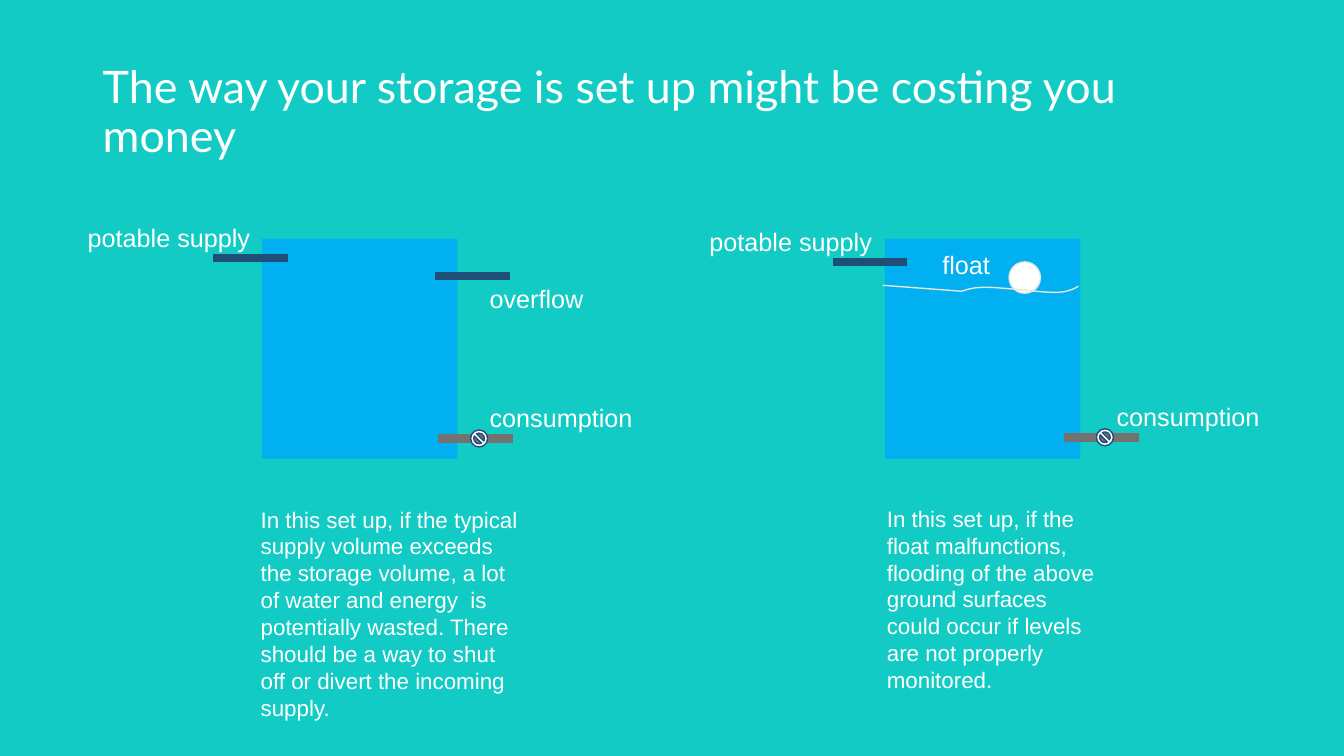
"""Build a slide comparing two water storage set-ups."""
from lxml.etree import SubElement
from pptx import Presentation
from pptx.dml.color import RGBColor
from pptx.enum.shapes import MSO_CONNECTOR, MSO_SHAPE
from pptx.enum.text import MSO_ANCHOR
from pptx.oxml.ns import qn
from pptx.util import Cm, Pt

TEAL = RGBColor(0x12, 0xCB, 0xC4)
WATER = RGBColor(0x00, 0xB0, 0xF0)
NAVY = RGBColor(0x1F, 0x4E, 0x79)
GREY = RGBColor(0x76, 0x71, 0x71)
PALE = RGBColor(0xE7, 0xE6, 0xE6)
WHITE = RGBColor(0xFF, 0xFF, 0xFF)

TITLE = "The way your storage is set up might be costing you money"
NOTES = [
    ("In this set up, if the typical supply volume exceeds the storage volume, "
     "a lot of water and energy  is potentially wasted. There should be a way "
     "to shut off or divert the incoming supply.", 6.32, 12.62, 7.04, 5.74),
    ("In this set up, if the float malfunctions,  flooding of the above ground "
     "surfaces could occur if levels are not properly monitored.",
     22.1, 12.6, 5.97, 5.05),
]
LABELS = [
    ("potable supply", 1.96, 5.49, 4.9),
    ("overflow", 12.09, 7.01, 3.02),
    ("consumption", 12.09, 10.01, 4.37),
    ("potable supply", 17.63, 5.59, 4.9),
    ("float", 23.5, 6.17, 1.8),
    ("consumption", 27.89, 9.98, 4.37),
]
TANK_LEFTS = [6.6, 22.3]
SUPPLY_PIPES = [(5.38, 6.5), (10.97, 6.96), (20.99, 6.6)]
VALVED_PIPES = [(11.05, 11.05), (26.82, 11.02)]
FLOAT = (25.43, 6.6, 0.79, 0.79)
WAVE_START = (22.25, 7.19)
WAVE_CREST = (24.23, 7.34)
WAVE_CURVES = [
    ((24.33, 7.32), (24.46, 7.24), (24.84, 7.24)),
    ((25.25, 7.24), (26.21, 7.37), (26.59, 7.37)),
    ((26.97, 7.37), (27.18, 7.21), (27.18, 7.21)),
]
TANK_TOP, TANK_W, TANK_H = 6.02, 4.93, 5.54
PIPE_LENGTH = 1.88
VALVE_OFFSET, VALVE_SIZE = 0.81, 0.43
LABEL_H = 1.02
CURVE_STEPS = 12


def add_text(s, text, x, y, w, h, size, font="Arial", wrap=True):
    tb = s.shapes.add_textbox(Cm(x), Cm(y), Cm(w), Cm(h))
    tf = tb.text_frame
    tf.word_wrap = wrap
    r = tf.paragraphs[0].add_run()
    r.text = text
    r.font.size = Pt(size)
    r.font.name = font
    r.font.color.rgb = WHITE
    return tf


def add_solid(s, kind, x, y, w, h, fill, line=None):
    sp = s.shapes.add_shape(kind, Cm(x), Cm(y), Cm(w), Cm(h))
    sp.shadow.inherit = False
    sp.fill.solid()
    sp.fill.fore_color.rgb = fill
    if line is None:
        sp.line.fill.background()
    else:
        sp.line.color.rgb = line
        sp.line.width = Pt(1)


def add_pipe(s, x, y, color):
    pipe = s.shapes.add_connector(
        MSO_CONNECTOR.STRAIGHT, Cm(x), Cm(y), Cm(x + PIPE_LENGTH), Cm(y))
    pipe.line.color.rgb = color
    pipe.line.width = Pt(6)
    SubElement(pipe._element.spPr, qn("a:effectLst"))


def bezier(points, t):
    weights = ((1 - t) ** 3, 3 * t * (1 - t) ** 2, 3 * t * t * (1 - t), t ** 3)
    return tuple(sum(k * p[axis] for k, p in zip(weights, points))
                 for axis in (0, 1))


def add_wave(s):
    points = [WAVE_CREST]
    for curve in WAVE_CURVES:
        controls = (points[-1], *curve)
        points += [bezier(controls, i / CURVE_STEPS)
                   for i in range(1, CURVE_STEPS + 1)]
    builder = s.shapes.build_freeform(*map(Cm, WAVE_START))
    builder.add_line_segments([(Cm(x), Cm(y)) for x, y in points], close=False)
    wave = builder.convert_to_shape()
    wave.shadow.inherit = False
    wave.fill.background()
    wave.line.color.rgb = PALE
    wave.line.width = Pt(1)


def main():
    prs = Presentation()
    prs.slide_width, prs.slide_height = Cm(33.87), Cm(19.05)
    s = prs.slides.add_slide(prs.slide_layouts[6])
    s.background.fill.solid()
    s.background.fill.fore_color.rgb = TEAL

    tf = add_text(s, TITLE, 2.34, 1.02, 29.21, 3.68, 32, "Lato")
    tf.vertical_anchor = MSO_ANCHOR.MIDDLE
    tf.paragraphs[0].line_spacing = 0.9

    for x in TANK_LEFTS:
        add_solid(s, MSO_SHAPE.RECTANGLE, x, TANK_TOP, TANK_W, TANK_H, WATER)
    for x, y in SUPPLY_PIPES:
        add_pipe(s, x, y, NAVY)
    for x, y in VALVED_PIPES:
        add_pipe(s, x, y, GREY)
        add_solid(s, MSO_SHAPE.NO_SYMBOL, x + VALVE_OFFSET, y - VALVE_SIZE / 2,
                  VALVE_SIZE, VALVE_SIZE, WHITE, NAVY)
    add_solid(s, MSO_SHAPE.OVAL, *FLOAT, WHITE, PALE)
    add_wave(s)
    for text, x, y, w in LABELS:
        add_text(s, text, x, y, w, LABEL_H, 18, wrap=False)
    for text, *box in NOTES:
        add_text(s, text, *box, 16)
    prs.save("out.pptx")


if __name__ == "__main__":
    main()
